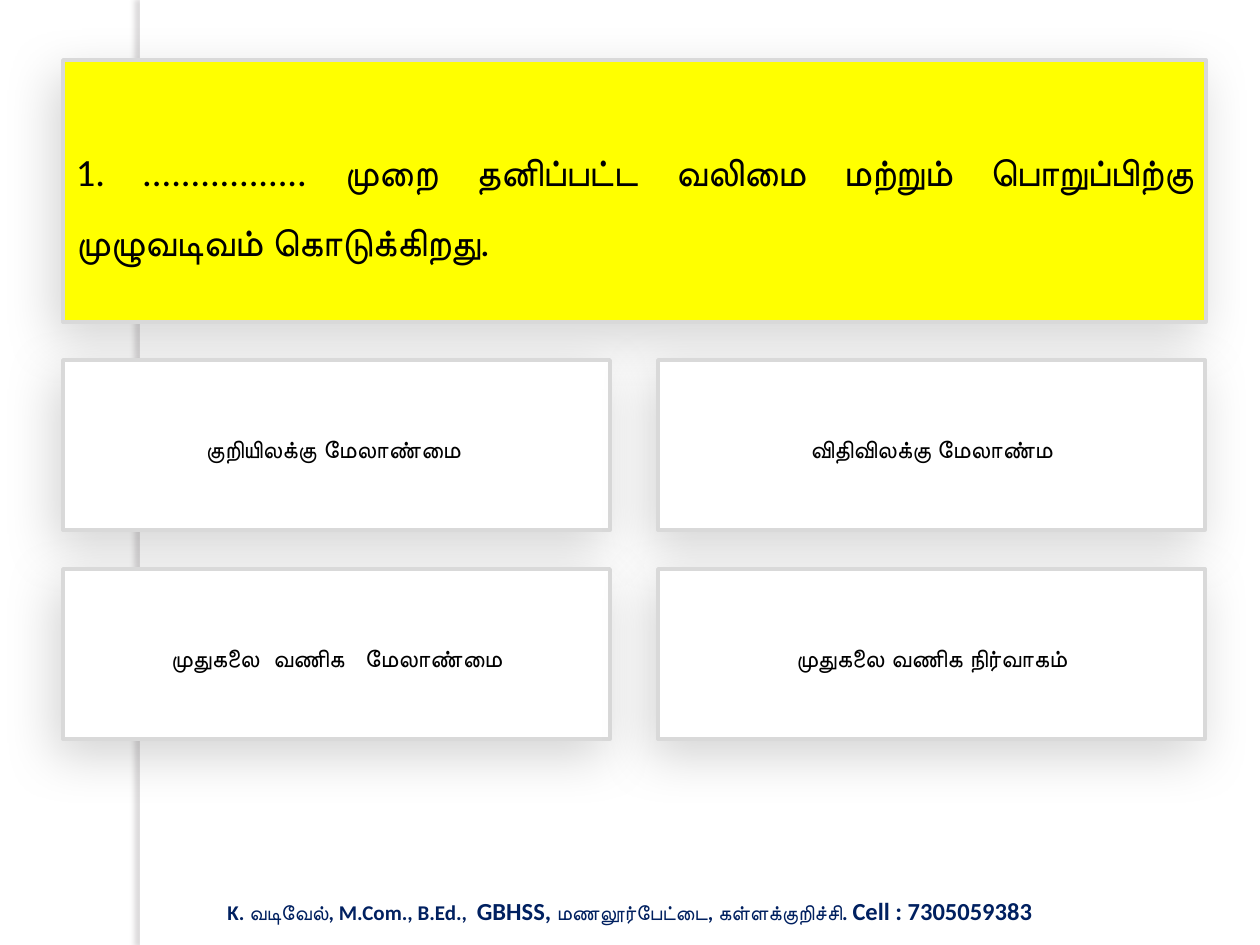
from typing import NamedTuple

from lxml.etree import SubElement
from pptx import Presentation
from pptx.dml.color import RGBColor
from pptx.enum.shapes import MSO_SHAPE
from pptx.enum.text import MSO_ANCHOR, PP_ALIGN
from pptx.oxml.ns import qn
from pptx.util import Pt

SCALE = 914400 / 126


class Run(NamedTuple):
    text: str
    size: int
    bold: bool = True
    color: str = "000000"


class Box(NamedTuple):
    left: int
    top: int
    width: int
    height: int


class Shade(NamedTuple):
    color: str
    alpha: int
    blur: int
    dist: int
    angle: int


CARD = Shade("000000", 16, 30, 10, 118)
STRIP = Shade("7A7276", 25, 3, 3, 180)
QUERY = Run("1. ................. முறை தனிப்பட்ட வலிமை மற்றும் பொறுப்பிற்கு "
            "முழுவடிவம் கொடுக்கிறது.", 22, False)
CHOICES = [
    Run("குறியிலக்கு மேலாண்மை ", 14),
    Run("விதிவிலக்கு மேலாண்ம", 14, False),
    Run("முதுகலை  வணிக   மேலாண்மை", 14),
    Run("முதுகலை வணிக நிர்வாகம்", 14),
]
NAVY = "002060"
FOOTER = [
    Run("K. வடிவேல், M.Com., B.Ed.,  ", 12, color=NAVY),
    Run("GBHSS, ", 14, color=NAVY),
    Run("மணலூர்பேட்டை, கள்ளக்குறிச்சி. ", 12, color=NAVY),
    Run("Cell : 7305059383", 14, color=NAVY),
]


def px(count: int) -> int:
    """Turn pixels into EMU."""
    return round(count * SCALE)


def rgb(code: str) -> RGBColor:
    """Turn a hex string into a colour."""
    return RGBColor.from_string(code)


def cast(shape, shade: Shade) -> None:
    """Give a shape an outer shadow."""
    shape.shadow.inherit = False
    effects = shape._element.spPr.find(qn("a:effectLst"))
    outer = SubElement(effects, qn("a:outerShdw"), blurRad=str(Pt(shade.blur)),
                       dist=str(Pt(shade.dist)), dir=str(shade.angle * 60000),
                       algn="ctr", rotWithShape="0")
    color = SubElement(outer, qn("a:srgbClr"), val=shade.color)
    SubElement(color, qn("a:alpha"), val=str(shade.alpha * 1000))


def write(shape, runs: list[Run], align: PP_ALIGN, space: float = 1.0) -> None:
    """Write one paragraph run by run."""
    shape.text_frame.word_wrap = True
    para = shape.text_frame.paragraphs[0]
    para.alignment, para.line_spacing = align, space
    for item in runs:
        run = para.add_run()
        run.text = item.text
        font = run.font
        font.name, font.size, font.bold = "Calibri", Pt(item.size), item.bold
        font.color.rgb = rgb(item.color)


def block(slide, box: Box, fill: str, shade: Shade):
    """Draw a filled rectangle with a shadow and no outline."""
    shape = slide.shapes.add_shape(MSO_SHAPE.RECTANGLE, *map(px, box))
    shape.fill.solid()
    shape.fill.fore_color.rgb = rgb(fill)
    shape.line.fill.background()
    cast(shape, shade)
    return shape


def card(slide, box: Box, fill: str, run: Run, align: PP_ALIGN,
         space: float = 1.0) -> None:
    """Draw an outlined card with its text."""
    shape = block(slide, box, fill, CARD)
    shape.line.color.rgb = rgb("D9D9D9")
    shape.line.width = Pt(2)
    frame = shape.text_frame
    frame.vertical_anchor = MSO_ANCHOR.MIDDLE
    frame.margin_top = px(20)
    frame.margin_left = frame.margin_right = frame.margin_bottom = px(13)
    write(shape, [run], align, space)


def main() -> None:
    """Build the quiz slide."""
    deck = Presentation()
    deck.slide_width, deck.slide_height = px(1260), px(945)
    slide = deck.slides.add_slide(deck.slide_layouts[6])
    block(slide, Box(140, 0, 10, 945), "FFFFFF", STRIP)
    card(slide, Box(63, 60, 1143, 262), "FFFF00", QUERY, PP_ALIGN.JUSTIFY, 1.5)
    for index, choice in enumerate(CHOICES):
        row, col = divmod(index, 2)
        box = Box(63 + col * 595, 360 + row * 209, 547, 170)
        card(slide, box, "FFFFFF", choice, PP_ALIGN.CENTER)
    foot = slide.shapes.add_textbox(*map(px, Box(0, 890, 1260, 43)))
    write(foot, FOOTER, PP_ALIGN.CENTER)
    deck.save("out.pptx")


if __name__ == "__main__":
    main()
